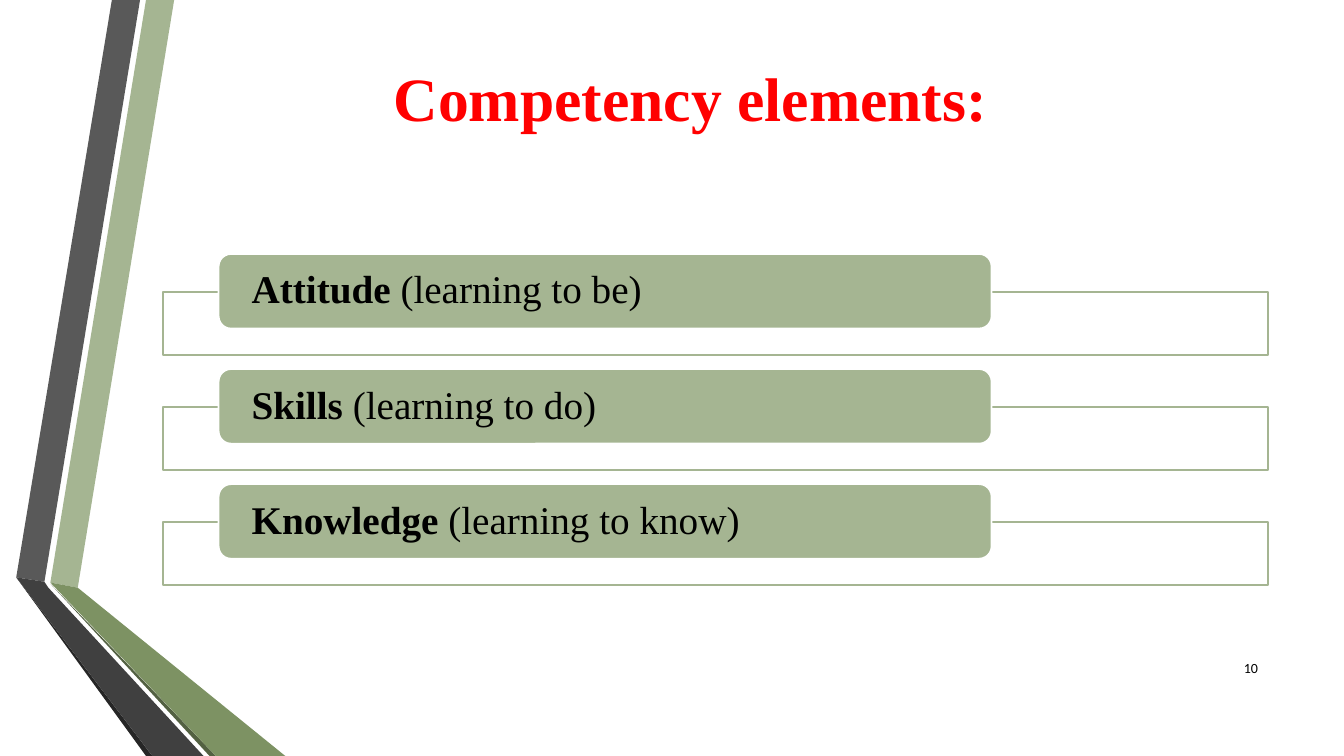
"""Build the slide on the three elements of competency."""
from lxml.etree import SubElement
from pptx import Presentation
from pptx.dml.color import RGBColor
from pptx.enum.shapes import MSO_SHAPE as Preset
from pptx.enum.text import MSO_ANCHOR as Anchor, PP_ALIGN as Align
from pptx.oxml.ns import qn
from pptx.util import Cm, Pt

COLORS = {
    "sage": "A5B592", "moss": "7D9263", "moss_shade": "536142",
    "grey": "595959", "charcoal": "404040", "charcoal_shade": "262626",
    "white": "FFFFFF", "black": "000000", "red": "FF0000",
}


def write(frame, text, size, color="black", bold=False, font="Times New Roman",
          align=Align.LEFT, spacing=None):
    paragraph = frame.paragraphs[0]
    paragraph.alignment = align
    paragraph.line_spacing = spacing
    run = paragraph.add_run()
    run.text = text
    run.font.size = Pt(size)
    run.font.name = font
    run.font.bold = bold
    run.font.color.rgb = RGBColor.from_string(COLORS[color])
    frame.word_wrap = True
    frame.vertical_anchor = Anchor.MIDDLE


def paint(shape, fill, line=None):
    shape.shadow.inherit = False
    shape.fill.solid()
    shape.fill.fore_color.rgb = RGBColor.from_string(COLORS[fill])
    if line:
        shape.line.color.rgb = RGBColor.from_string(COLORS[line])
        shape.line.width = Pt(1.25)
    else:
        shape.line.fill.background()


deck = Presentation()
deck.slide_width, deck.slide_height = Cm(33.87), Cm(19.05)
slide = deck.slides.add_slide(deck.slide_layouts[5])
shapes = slide.shapes

ribbons = [
    ("sage", [(1.27, 14.68), (1.96, 14.81), (4.39, 0), (3.68, 0)]),
    ("grey", [(3.53, 0), (2.82, 0), (0.41, 14.55), (1.12, 14.66)]),
    ("charcoal_shade", [(0.41, 14.55), (3.68, 19.05), (3.84, 19.05)]),
    ("moss_shade", [(1.27, 14.71), (5.28, 19.05), (5.44, 19.05)]),
    ("moss", [(1.27, 14.68), (5.44, 19.05), (7.19, 19.05), (1.96, 14.81)]),
    ("charcoal", [(5.13, 19.05), (1.22, 14.81), (1.12, 14.66),
                  (0.41, 14.55), (3.84, 19.05)]),
]
for color, corners in ribbons:
    start, *others = [(Cm(x), Cm(y)) for x, y in corners]
    outline = shapes.build_freeform(*start)
    outline.add_line_segments(others, close=True)
    paint(outline.convert_to_shape(), color)

title = shapes.title
title.left, title.top, title.width, title.height = Cm(3.68), Cm(0), Cm(27.84), Cm(4.88)
write(title.text_frame, "Competency elements: ", 44, color="red", bold=True,
      align=Align.CENTER)

elements = [
    ("Attitude ", "(learning to be)"),
    ("Skills ", "(learning to do)"),
    ("Knowledge ", "(learning to know)"),
]
for index, (element, meaning) in enumerate(elements):
    top = 6.4 + 2.9 * index
    panel = shapes.add_shape(Preset.RECTANGLE, Cm(4.11), Cm(top + 0.95),
                             Cm(27.84), Cm(1.6))
    paint(panel, "white", line="sage")
    panel_color = panel.fill._xPr.find(qn("a:solidFill"))[0]
    SubElement(panel_color, qn("a:alpha"), val="90000")

    label = shapes.add_shape(Preset.ROUNDED_RECTANGLE, Cm(5.51), Cm(top),
                             Cm(19.48), Cm(1.88))
    paint(label, "sage", line="white")
    frame = label.text_frame
    frame.margin_left = frame.margin_right = Cm(0.74)
    frame.margin_top = frame.margin_bottom = 0
    write(frame, element, 28, bold=True, spacing=0.9)
    write(frame, meaning, 28, spacing=0.9)

page_number = shapes.add_textbox(Cm(30.43), Cm(16.31), Cm(1.52), Cm(1.02))
write(page_number.text_frame, "10", 10, font="Calibri", align=Align.RIGHT)

deck.save("out.pptx")
